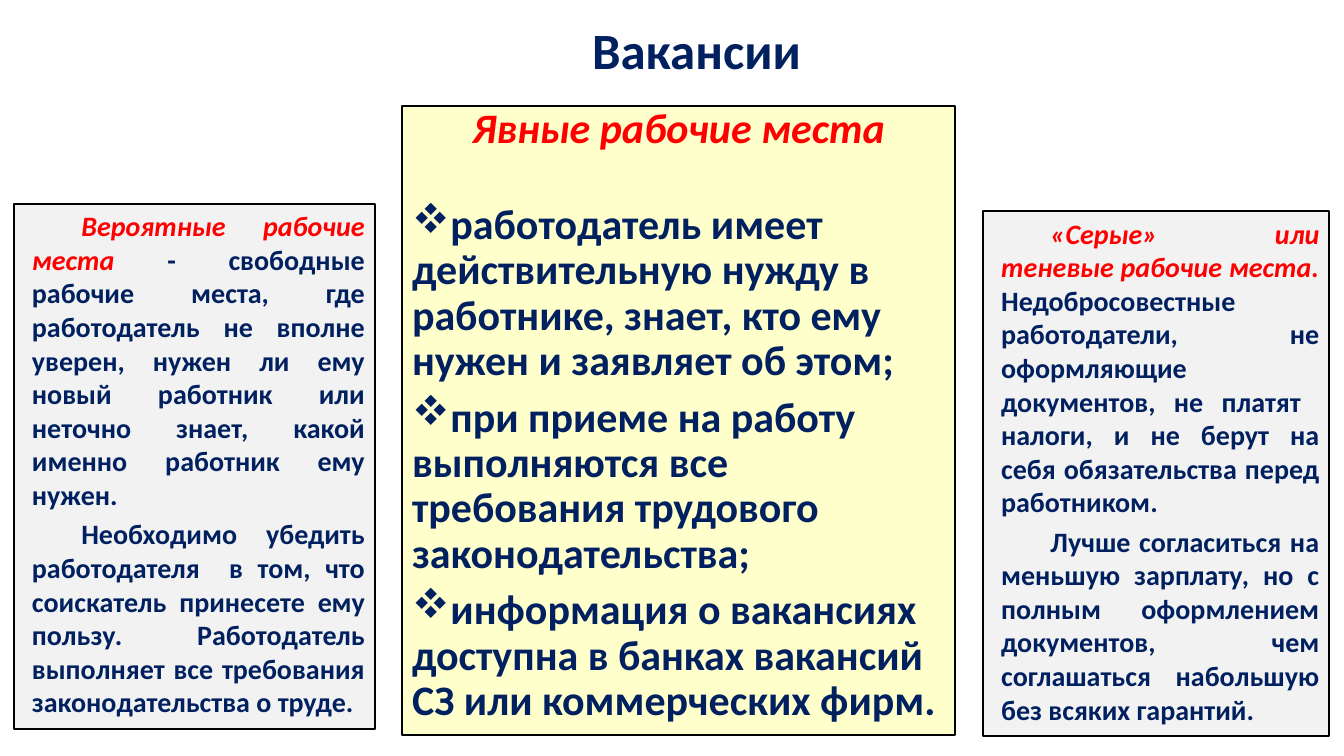
"""Build the slide on three kinds of job vacancies."""
from pptx import Presentation, util as u
from pptx.dml.color import RGBColor
from pptx.enum import shapes, text
from pptx.oxml.ns import qn
from lxml import etree

PX = 9525
COLORS = {"navy": "002060", "red": "FF0000", "cream": "FFFFCC",
          "gray": "F2F2F2", "black": "000000"}


def style(run, size, color, italic=False):
    font = run.font
    font.name, font.size = "Calibri", u.Pt(size)
    font.bold, font.italic = True, italic
    font.color.rgb = RGBColor.from_string(COLORS[color])


def panel(x, y, w, h, fill):
    box = slide.shapes.add_shape(shapes.MSO_SHAPE.RECTANGLE,
                                 x * PX, y * PX, w * PX, h * PX)
    box.shadow.inherit = False
    box.fill.solid()
    box.fill.fore_color.rgb = RGBColor.from_string(COLORS[fill])
    box.line.color.rgb = RGBColor.from_string(COLORS["black"])
    box.line.width = u.Pt(1.5)
    frame = box.text_frame
    frame.word_wrap = True
    frame.vertical_anchor = text.MSO_ANCHOR.TOP
    return frame


prs = Presentation()
prs.slide_width, prs.slide_height = 1280 * PX, 720 * PX
slide = prs.slides.add_slide(prs.slide_layouts[5])

title = slide.shapes.title
title.left, title.top, title.width, title.height = 88 * PX, 22 * PX, 1104 * PX, 60 * PX
title.text_frame.text = "Вакансии"
title.text_frame.auto_size = text.MSO_AUTO_SIZE.NONE
title.text_frame.vertical_anchor = text.MSO_ANCHOR.MIDDLE
head = title.text_frame.paragraphs[0]
head.alignment, head.line_spacing = text.PP_ALIGN.CENTER, 0.8
head._p.get_or_add_pPr().set("marL", str(47 * PX))
style(head.runs[0], 36.3, "navy")

frame = panel(383, 101, 527, 599, "cream")
frame.text = "Явные рабочие места"
head = frame.paragraphs[0]
head.alignment, head.line_spacing = text.PP_ALIGN.CENTER, 0.8
head.space_after = u.Pt(37)
style(head.runs[0], 30, "red", True)

points = [
    "работодатель имеет действительную нужду в работнике, знает, кто ему нужен и заявляет об этом;",
    "при приеме на работу выполняются все требования трудового законодательства;",
    "информация о вакансиях доступна в банках вакансий СЗ или коммерческих фирм.",
]
for point in points:
    para = frame.add_paragraph()
    para.text = point
    para.alignment, para.line_spacing = text.PP_ALIGN.LEFT, 0.9
    para.space_after = u.Pt(8)
    props = para._p.get_or_add_pPr()
    props.set("marL", "0")
    props.set("indent", "0")
    etree.SubElement(props, qn("a:buFont")).set("typeface", "Wingdings")
    etree.SubElement(props, qn("a:buChar")).set("char", "v")
    style(para.runs[0], 30, "navy")

sides = [
    ((13, 194, 344, 500), "Вероятные рабочие места ",
     "- свободные рабочие места, где работодатель не вполне уверен, нужен ли ему "
     "новый работник или неточно знает, какой именно работник ему нужен. ",
     "Необходимо убедить работодателя  в том, что соискатель принесете ему пользу. "
     "Работодатель выполняет все требования законодательства о труде."),
    ((936, 201, 330, 500), "«Серые» или теневые рабочие места. ",
     "Недобросовестные работодатели, не оформляющие документов, не платят  налоги, "
     "и не берут на себя обязательства перед работником. ",
     "Лучше согласиться на меньшую зарплату, но с полным оформлением документов, "
     "чем соглашаться набольшую без всяких гарантий."),
]
for area, term, meaning, advice in sides:
    frame = panel(*area, "gray")
    frame.text = term
    first = frame.paragraphs[0]
    first.add_run().text = meaning
    last = frame.add_paragraph()
    last.text = advice
    for para in (first, last):
        para.alignment = text.PP_ALIGN.JUSTIFY
        para.space_after = u.Pt(4)
        props = para._p.get_or_add_pPr()
        props.set("marL", str(8 * PX))
        props.set("indent", str(47 * PX))
        for run in para.runs:
            style(run, 20, "navy")
    style(first.runs[0], 20, "red", True)

prs.save("out.pptx")
